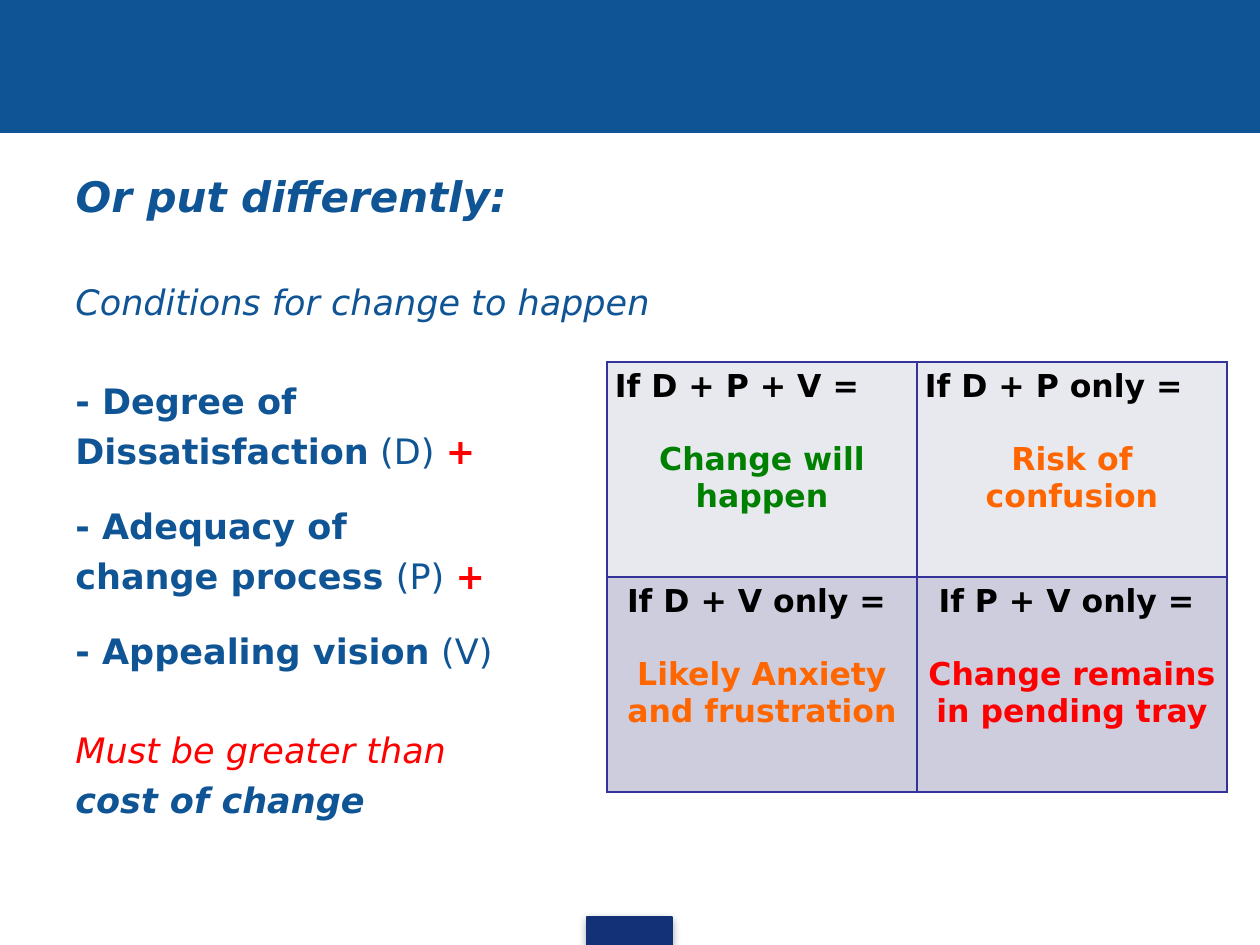
from lxml.etree import SubElement as Sub
from pptx import Presentation
from pptx.dml.color import RGBColor
from pptx.enum.shapes import MSO_SHAPE as Shape
from pptx.enum.text import MSO_ANCHOR as Anchor, MSO_AUTO_SIZE as Fit, PP_ALIGN as Align
from pptx.oxml import parse_xml
from pptx.oxml.ns import nsdecls, qn
from pptx.util import Pt

FONT = "DejaVu Sans"
BLUE = RGBColor(0x0F, 0x54, 0x94)
NAVY = RGBColor(0x13, 0x31, 0x76)
EDGE = RGBColor(0x33, 0x33, 0x99)
PALE = RGBColor(0xE8, 0xE8, 0xEF)
LILAC = RGBColor(0xCD, 0xCD, 0xDE)
BLACK = RGBColor(0, 0, 0)
GREEN = RGBColor(0, 0x80, 0)
ORANGE = RGBColor(0xFF, 0x66, 0)
RED = RGBColor(0xFF, 0, 0)

CELLS = [
    [("If D + P + V =", "Change will happen", GREEN),
     ("If D + P only =", "Risk of confusion", ORANGE)],
    [("If D + V only = ", "Likely Anxiety and frustration", ORANGE),
     ("If P + V only = ", "Change remains in pending tray", RED)],
]
LINES = [
    (0, True, [("Conditions for change to happen", False, BLUE)]),
    (57, False, [("- Degree of", True, BLUE)]),
    (8, False, [("Dissatisfaction", True, BLUE), (" (D) ", False, BLUE), ("+", True, RED)]),
    (33, False, [("- Adequacy of", True, BLUE)]),
    (8, False, [("change process ", True, BLUE), ("(P) ", False, BLUE), ("+", True, RED)]),
    (33, False, [("- Appealing vision", True, BLUE), (" (V)", False, BLUE)]),
    (57, True, [("Must be greater than", False, RED)]),
    (8, True, [("cost of change", True, BLUE)]),
]


def px(n):
    return round(n * 914400 / 126)


def scale(box):
    return [px(n) for n in box]


def style(font, size, color, bold=False, slant=False):
    font.name = FONT
    font.size = Pt(size)
    font.bold = bold
    font.italic = slant
    font.color.rgb = color


def add_bar(slide, box, color):
    bar = slide.shapes.add_shape(Shape.RECTANGLE, *scale(box))
    bar.shadow.inherit = False
    bar.fill.solid()
    bar.fill.fore_color.rgb = color
    bar.line.color.rgb = color
    bar.line.width = Pt(0.75)
    return bar


def add_tab(slide, box):
    tab = add_bar(slide, box, NAVY)
    glow = tab.element.spPr.find(qn("a:effectLst"))
    shade = Sub(glow, qn("a:outerShdw"), blurRad=str(Pt(5)), dist=str(Pt(1.8)),
                dir="5400000", rotWithShape="0")
    tint = Sub(shade, qn("a:srgbClr"), val="000000")
    Sub(tint, qn("a:alpha"), val="35000")


def add_title(slide, box):
    title = slide.shapes.title
    title.left, title.top, title.width, title.height = scale(box)
    frame = title.text_frame
    frame.auto_size = Fit.NONE
    frame.vertical_anchor = Anchor.BOTTOM
    frame.margin_bottom = px(42)
    frame.text = "Or put differently:"
    para = frame.paragraphs[0]
    para.alignment = Align.LEFT
    style(para.font, 24, BLUE, True, True)


def add_terms(slide, box):
    frame = slide.shapes.add_textbox(*scale(box)).text_frame
    frame.word_wrap = True
    for i, (gap, slant, parts) in enumerate(LINES):
        para = frame.add_paragraph() if i else frame.paragraphs[0]
        para.space_before = px(gap)
        for text, bold, color in parts:
            run = para.add_run()
            run.text = text
            style(run.font, 20, color, bold, slant)


def add_edges(cell):
    props = cell._tc.get_or_add_tcPr()
    for i, side in enumerate("LRTB"):
        props.insert(i, parse_xml(
            f'<a:ln{side} {nsdecls("a")} w="{Pt(1)}"><a:solidFill>'
            f'<a:srgbClr val="{EDGE}"/></a:solidFill></a:ln{side}>'))


def fill_cell(cell, head, result, color, back, align):
    cell.fill.solid()
    cell.fill.fore_color.rgb = back
    add_edges(cell)
    cell.margin_left = cell.margin_right = px(8)
    cell.margin_top = cell.margin_bottom = px(6)
    frame = cell.text_frame
    first, last = frame.paragraphs[0], frame.add_paragraph()
    first.text, last.text = head, result
    first.alignment, last.alignment = align, Align.CENTER
    last.space_before = px(37)
    style(first.font, 18, BLACK, True)
    style(last.font, 18, color, True)


def add_grid(slide, box):
    table = slide.shapes.add_table(2, 2, *scale(box)).table
    table.first_row = table.horz_banding = False
    looks = [(PALE, Align.LEFT), (LILAC, Align.CENTER)]
    for r, (row, look) in enumerate(zip(CELLS, looks)):
        for c, item in enumerate(row):
            fill_cell(table.cell(r, c), *item, *look)


def main():
    deck = Presentation()
    deck.slide_width, deck.slide_height = px(1260), px(945)
    slide = deck.slides.add_slide(deck.slide_layouts[5])
    add_bar(slide, (0, 0, 1260, 132), BLUE)
    add_tab(slide, (587, 917, 85, 28))
    add_title(slide, (63, 147, 693, 116))
    add_grid(slide, (607, 362, 620, 430))
    add_terms(slide, (63, 274, 829, 571))
    deck.save("out.pptx")


if __name__ == "__main__":
    main()
